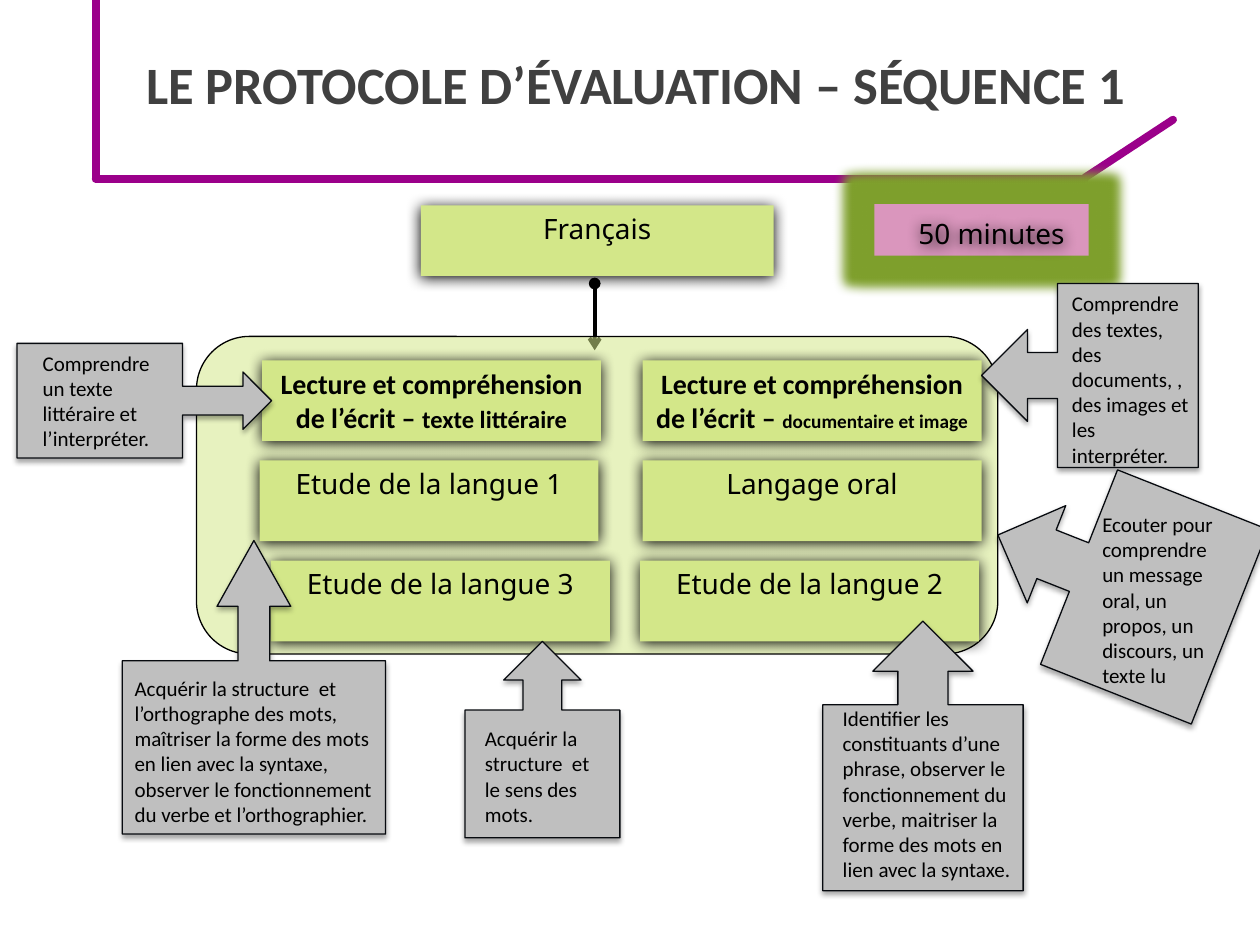
from lxml.etree import SubElement
from pptx import Presentation
from pptx.dml.color import RGBColor
from pptx.enum.shapes import MSO_CONNECTOR as Conn, MSO_SHAPE as Shape
from pptx.enum.text import MSO_ANCHOR as Anchor, PP_ALIGN as Align
from pptx.oxml.ns import qn
from pptx.util import Inches, Pt

PURPLE = RGBColor(0x9B, 0x00, 0x8A)
LIME = RGBColor(0xD3, 0xE7, 0x89)
PINK = RGBColor(0xDA, 0x96, 0xBD)
GREY = RGBColor(0xBF, 0xBF, 0xBF)
DARK = RGBColor(0x40, 0x40, 0x40)
INK = RGBColor(0x07, 0x0A, 0x0F)
BLACK = RGBColor(0, 0, 0)
GLOW = RGBColor(0x7F, 0xA0, 0x2D)
STRONG = (100, 8.5, 1)  # shadow: opacity %, blur pt, distance pt
SOFT = (35, 3.1, 1.8)

prs = Presentation()
prs.slide_width, prs.slide_height = Inches(10), Inches(7.5)
U = prs.slide_width // 100  # grid of 100 columns by 75 rows
s = prs.slides.add_slide(prs.slide_layouts[5])


def write(sp, *runs, font="Calibri", color=BLACK, bold=False, align=Align.LEFT,
          anchor=Anchor.TOP):
    """Fill a shape with one paragraph of (text, size) runs."""
    tf = sp.text_frame
    tf.word_wrap, tf.vertical_anchor = True, anchor
    p = tf.paragraphs[0]
    p.alignment = align
    for text, size in runs:
        r = p.add_run()
        r.text = text
        r.font.name, r.font.size, r.font.bold = font, Pt(size), bold
        r.font.color.rgb = color


def block(kind, box, fill=None, line=None, shadow=None):
    """Draw a shape (or a text box if kind is None) on the grid."""
    area = [round(v * U) for v in box]
    if kind is None:
        sp = s.shapes.add_textbox(*area)
    else:
        sp = s.shapes.add_shape(kind, *area)
        sp.shadow.inherit = False
        sp.fill.solid()
        sp.fill.fore_color.rgb = fill
        if line is None:
            sp.line.fill.background()
        else:
            sp.line.color.rgb, sp.line.width = line, Pt(0.75)
    if shadow:
        alpha, blur, dist = shadow
        effects = sp._element.spPr.find(qn("a:effectLst"))
        if effects is None:
            effects = SubElement(sp._element.spPr, qn("a:effectLst"))
        shd = SubElement(effects, qn("a:outerShdw"), blurRad=str(Pt(blur)),
                         dist=str(Pt(dist)), dir="5400000", rotWithShape="0")
        clr = SubElement(shd, qn("a:srgbClr"), val=str(BLACK))
        SubElement(clr, qn("a:alpha"), val=str(alpha * 1000))
    return sp


# Title
title = s.shapes.title
title.left, title.top, title.width, title.height = (
    round(v * U) for v in (9.7, 3.6, 80.7, 6.1))
title.text_frame.margin_left, title.text_frame.margin_right = Inches(0.19), 0
write(title, ("LE PROTOCOLE D’ÉVALUATION – SÉQUENCE 1", 30), color=DARK, bold=True)

# Purple frame and the arrow from the subject to the panel
lines = [((7.6, 14.2), (86.1, 14.2), PURPLE, 4.5),
         ((86.1, 14.1), (93.1, 9.5), PURPLE, 4.5),
         ((7.6, 14.1), (7.6, 0), PURPLE, 4.5),
         ((47.2, 22.5), (47.2, 27.8), BLACK, 2.25)]
for start, end, color, width in lines:
    cn = s.shapes.add_connector(Conn.STRAIGHT, *(round(v * U) for v in start + end))
    cn.line.color.rgb, cn.line.width = color, Pt(width)
    ln = cn.line._get_or_add_ln()
    ln.set("cap", "rnd" if color == PURPLE else "flat")
    if color == BLACK:
        SubElement(ln, qn("a:headEnd"), type="oval")
        SubElement(ln, qn("a:tailEnd"), type="arrow")
    SubElement(cn._element.spPr, qn("a:effectLst"))

# Subject
subject = block(Shape.RECTANGLE, (33.4, 16.3, 28, 5.6), LIME, shadow=STRONG)
write(subject, ("Français", 16), font="Noto Sans", align=Align.CENTER)

# Translucent panel
panel = block(Shape.ROUNDED_RECTANGLE, (15.6, 26.7, 63.6, 25.2), LIME, BLACK)
tint = panel._element.spPr.find(qn("a:solidFill")).find(qn("a:srgbClr"))
SubElement(tint, qn("a:alpha"), val="54000")

# Six test blocks in two columns and three rows
TOP, STEP = 28.6, 7.95
READING = "Lecture et compréhension de l’écrit – "
tests = [(20.8, 0, [(READING, 16), ("texte littéraire", 14)]),
         (51, 0, [(READING, 16), ("documentaire et image", 11)]),
         (20.6, 1, [("Etude de la langue 1", 16)]),
         (51, 1, [("Langage oral", 16)]),
         (21.5, 2, [("Etude de la langue 3", 16)]),
         (50.8, 2, [("Etude de la langue 2", 16)])]
for x, row, runs in tests:
    sp = block(Shape.RECTANGLE, (x, TOP + row * STEP, 26.9, 6.4), LIME, shadow=STRONG)
    write(sp, *runs, font="Noto Sans" if row else "Calibri", bold=row == 0,
          align=Align.CENTER)

# Duration with its glow
badge = block(Shape.RECTANGLE, (69.4, 16.2, 17, 4.1), PINK)
glow = SubElement(badge._element.spPr.find(qn("a:effectLst")), qn("a:glow"),
                  rad=str(Pt(12)))
SubElement(glow, qn("a:srgbClr"), val=str(GLOW))
duration = block(None, (70.4, 16.7, 16.6, 3.9), shadow=STRONG)
write(duration, ("50 minutes", 16), font="Noto Sans", align=Align.CENTER)

# Skill callouts: arrow box, rotation, adjustments, text box, text
PLAIN = (0.25, 0.25, 0.25, 0.65)
callouts = [
    ((65.3, 49.3, 15.9, 21.4), 0, (0.25, 0.25, 0.25, 0.69), (65.9, 55.5, 16.4, 15.1),
     "Identifier les constituants d’une phrase, observer le fonctionnement du verbe, "
     "maitriser la forme des mots en lien avec la syntaxe."),
    ((79.2, 21.2, 14.6, 17.2), 270, PLAIN, (84.1, 22.6, 11.3, 15.1),
     "Comprendre des textes, des documents, , des images et les interpréter."),
    ((6.9, 21.7, 9.1, 20.2), 90, PLAIN, (2.4, 27.3, 11.9, 9.1),
     "Comprendre un texte littéraire et l’interpréter."),
    ((9.7, 42.9, 20.9, 23.3), 0, (0.12, 0.14, 0.25, 0.59), (9.7, 53.1, 22.3, 13.1),
     "Acquérir la structure  et l’orthographe des mots, maîtriser la forme des mots "
     "en lien avec la syntaxe, observer le fonctionnement du verbe et l’orthographier."),
    ((36.9, 50.9, 12.3, 15.6), 0, PLAIN, (37.5, 57.1, 11.2, 9.1),
     "Acquérir la structure  et le sens des mots."),
    ((80.1, 36.2, 16.6, 19.8), 291.6, PLAIN, (86.5, 40.1, 11.3, 15.1),
     "Ecouter pour comprendre un message oral, un propos, un discours, un texte lu"),
]
for box, angle, adjust, text_box, text in callouts:
    arrow = block(Shape.UP_ARROW_CALLOUT, box, GREY, INK, SOFT)
    arrow.rotation = angle
    for i, value in enumerate(adjust):
        arrow.adjustments[i] = value
    write(block(None, text_box), (text, 12))

prs.save("out.pptx")
